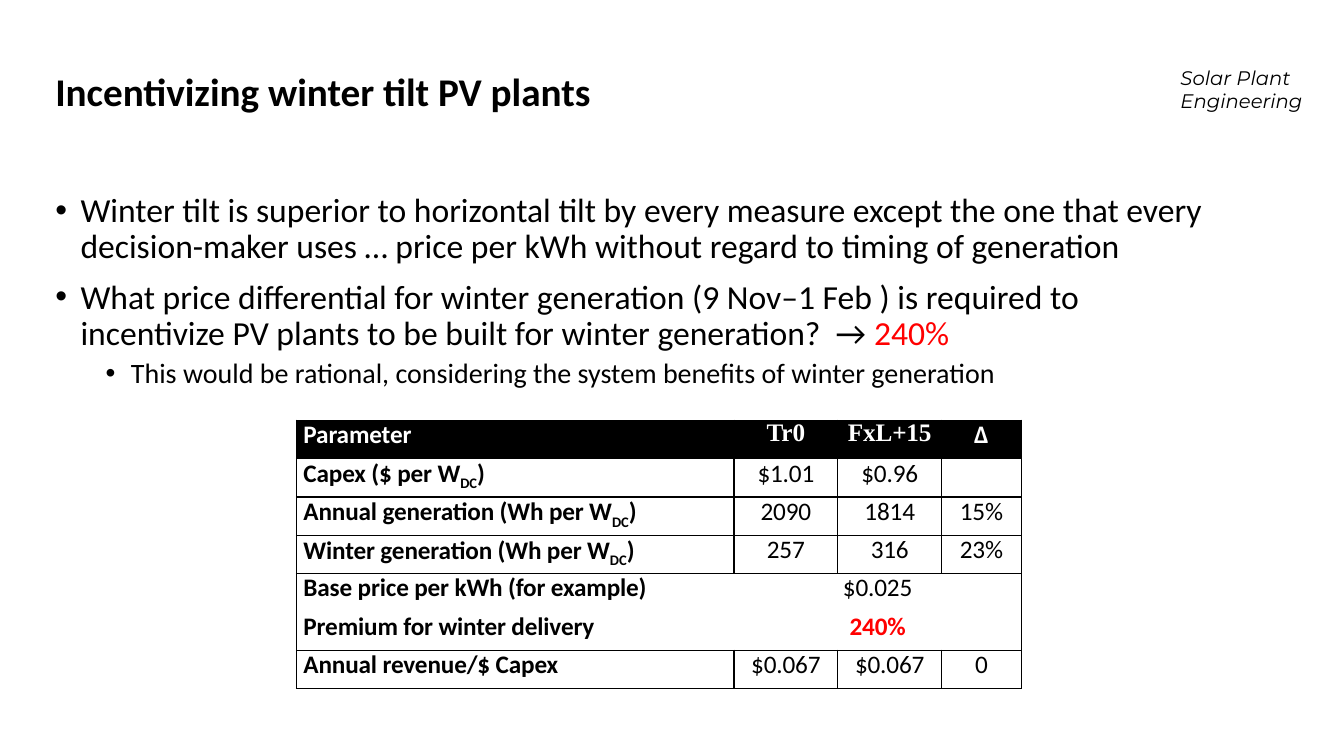
from dataclasses import dataclass

from lxml.etree import SubElement
from pptx import Presentation
from pptx.dml.color import RGBColor
from pptx.enum.text import MSO_ANCHOR as Anchor, PP_ALIGN as Align
from pptx.oxml.ns import qn
from pptx.util import Pt


@dataclass(frozen=True)
class Theme:
    ink: str = "000000"
    paper: str = "FFFFFF"
    accent: str = "FF0000"
    body_font: str = "Calibri"
    brand_font: str = "Montserrat"
    label_font: str = "Times New Roman"
    title_size: int = 28
    bullet_size: int = 24
    detail_size: int = 20
    table_size: int = 18
    brand_size: int = 14


theme = Theme()
PX = 9144


def add_text_box(left, top, width, height):
    box = page.shapes.add_textbox(left * PX, top * PX, width * PX, height * PX)
    box.text_frame.word_wrap = True
    return box.text_frame


def add_span(para, text, size, color=theme.ink, font=theme.body_font, bold=False):
    span = para.add_run()
    span.text = text
    span.font.size = Pt(size)
    span.font.name = font
    span.font.bold = bold
    span.font.color.rgb = RGBColor.from_string(color)
    return span


deck = Presentation()
deck.slide_width = 1333 * PX
deck.slide_height = 750 * PX
page = deck.slides.add_slide(deck.slide_layouts[6])

brand = add_text_box(1161, 60, 150, 57)
brand_span = add_span(brand.paragraphs[0], "Solar Plant Engineering", theme.brand_size, font=theme.brand_font)
brand_span.font.italic = True

title = add_text_box(45, 40, 1063, 106)
title.vertical_anchor = Anchor.MIDDLE
title.paragraphs[0].line_spacing = 0.9
add_span(title.paragraphs[0], "Incentivizing winter tilt PV plants", theme.title_size, bold=True)

bullets = [
    (25, 0, theme.bullet_size, [
        ("Winter tilt is superior to horizontal tilt by every measure except the one that every "
         "decision-maker uses … price per kWh without regard to timing of generation", theme.ink)]),
    (25, 10, theme.bullet_size, [
        ("What price differential for winter generation (9 Nov–1 Feb ) is required to "
         "incentivize PV plants to be built for winter generation?  → ", theme.ink),
        ("240%", theme.accent)]),
    (75, 5, theme.detail_size, [
        ("This would be rational, considering the system benefits of winter generation", theme.ink)]),
]
body = add_text_box(45, 187, 1179, 252)
for index, (indent, space, size, parts) in enumerate(bullets):
    para = body.add_paragraph() if index else body.paragraphs[0]
    para.line_spacing = 0.9
    para.space_before = Pt(space)
    props = para._p.get_or_add_pPr()
    props.set("marL", str(indent * PX))
    props.set("indent", str(-25 * PX))
    SubElement(props, qn("a:buFont")).set("typeface", "Arial")
    SubElement(props, qn("a:buChar")).set("char", "•")
    for text, color in parts:
        add_span(para, text, size, color)

rows = [
    ("Parameter", "Tr0", "FxL+15", "Δ"),
    ("Capex ($ per W|DC|)", "$1.01", "$0.96", ""),
    ("Annual generation (Wh per W|DC|)", "2090", "1814", "15%"),
    ("Winter generation (Wh per W|DC|)", "257", "316", "23%"),
    ("Base price per kWh (for example)", "$0.025", "", ""),
    ("Premium for winter delivery", "240%", "", ""),
    ("Annual revenue/$ Capex", "$0.067", "$0.067", "0"),
]
base_row, premium_row = 4, 5
shared_rows = (base_row, premium_row)
widths = [434, 103, 103, 79]
row_height = 38

frame = page.shapes.add_table(len(rows), len(widths), 294 * PX, 417 * PX,
                              sum(widths) * PX, row_height * len(rows) * PX)
table = frame.table
table.first_row = False
table.horz_banding = False
for column, width in zip(table.columns, widths):
    column.width = width * PX
for row in table.rows:
    row.height = row_height * PX
for shared in shared_rows:
    table.cell(shared, 1).merge(table.cell(shared, 3))

for r, values in enumerate(rows):
    header = r == 0
    for c, value in enumerate(values):
        cell = table.cell(r, c)
        cell.margin_left = cell.margin_right = 7 * PX
        cell.margin_top = cell.margin_bottom = 0

        edges = {
            "a:lnL": r not in shared_rows or c == 0,
            "a:lnR": r not in shared_rows or c > 0,
            "a:lnT": r != premium_row,
            "a:lnB": r != base_row,
        }
        for tag, visible in edges.items():
            line = SubElement(cell._tc.get_or_add_tcPr(), qn(tag), w=str(Pt(1)))
            if visible:
                fill = SubElement(line, qn("a:solidFill"))
                SubElement(fill, qn("a:srgbClr")).set("val", theme.ink)
            else:
                SubElement(line, qn("a:noFill"))
        cell.fill.solid()
        cell.fill.fore_color.rgb = RGBColor.from_string(theme.ink if header else theme.paper)

        if not value:
            continue
        para = cell.text_frame.paragraphs[0]
        para.alignment = Align.CENTER if c else Align.JUSTIFY
        para.line_spacing = 0.95
        premium = r == premium_row and c == 1
        color = theme.paper if header else theme.accent if premium else theme.ink
        font = theme.label_font if header and c in (1, 2) else theme.body_font
        for position, text in enumerate(value.split("|")):
            span = add_span(para, text, theme.table_size, color, font, header or c == 0 or premium)
            span._r.get_or_add_rPr().set("spc", "-10")
            if position == 1:
                span._r.get_or_add_rPr().set("baseline", "-25000")

deck.save("out.pptx")
